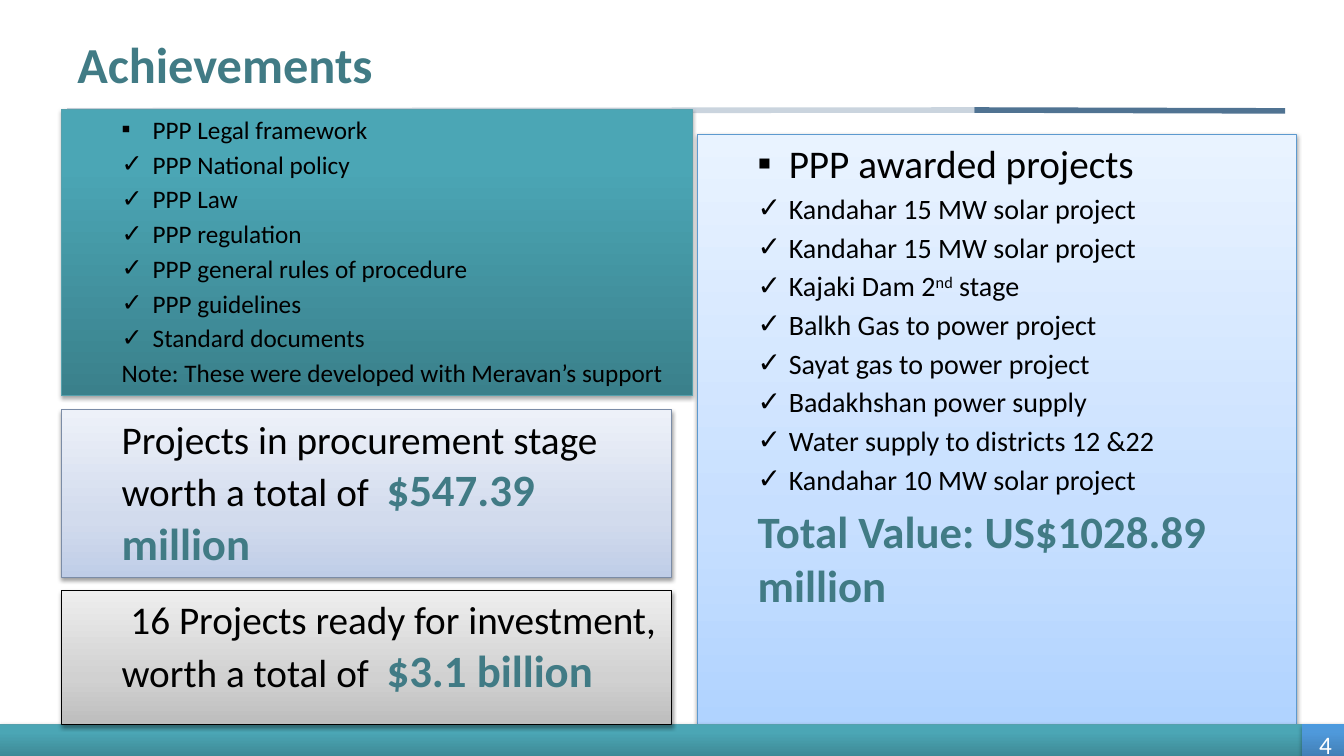
"""Build the Achievements slide on public-private partnership projects."""
from dataclasses import dataclass

from lxml.etree import SubElement
from pptx import Presentation
from pptx.dml.color import RGBColor
from pptx.enum.shapes import MSO_CONNECTOR as Connector, MSO_SHAPE as Preset
from pptx.enum.text import MSO_ANCHOR as Anchor, MSO_AUTO_SIZE as AutoSize, PP_ALIGN as Align
from pptx.oxml.ns import qn
from pptx.shapes.autoshape import Shape
from pptx.slide import Slide
from pptx.text.text import TextFrame, _Paragraph as Paragraph, _Run as Run
from pptx.util import Inches, Pt

COLUMNS, ROWS = 160, 90
SLIDE_WIDTH, SLIDE_HEIGHT = Inches(13.33), Inches(7.5)
FONT = "Calibri"
SQUARE, CHECK = "▪", "✓"
TEXT_INDENT, BULLET_INDENT, BULLET_HANG = 6, 9.7, 3.7
SPACE_SHARE = 0.18

BLACK = RGBColor(0x00, 0x00, 0x00)
WHITE = RGBColor(0xFF, 0xFF, 0xFF)
TEAL = RGBColor(0x41, 0x7B, 0x85)
SLATE = RGBColor(0x50, 0x73, 0x92)
TEAL_EDGE = RGBColor(0x56, 0xA0, 0xAC)
SKY_EDGE = RGBColor(0x5D, 0x9A, 0xCF)
LILAC_EDGE = RGBColor(0x7B, 0x8C, 0xA6)
TEAL_SHADES = (RGBColor(0x3A, 0x80, 0x8B), RGBColor(0x4B, 0xA6, 0xB5), RGBColor(0x49, 0xA8, 0xB8))
BLUE_SHADES = (RGBColor(0x3D, 0x76, 0xA8), RGBColor(0x4F, 0x99, 0xDB), RGBColor(0x4C, 0x9A, 0xDE))
SKY_SHADES = (RGBColor(0xB0, 0xD3, 0xFF), RGBColor(0xC7, 0xDF, 0xFF), RGBColor(0xE9, 0xF3, 0xFF))
LILAC_SHADES = (RGBColor(0xBF, 0xCD, 0xE7), RGBColor(0xD2, 0xDB, 0xED), RGBColor(0xED, 0xF1, 0xF9))
GREY_SHADES = (RGBColor(0xBD, 0xBD, 0xBD), RGBColor(0xD1, 0xD1, 0xD1), RGBColor(0xEE, 0xEE, 0xEE))


@dataclass(frozen=True)
class Area:
    """Place on the grid, in columns and rows."""
    column: float
    row: float
    columns: float
    rows: float


@dataclass(frozen=True)
class Finish:
    """Upward gradient, outline and shadow of a panel."""
    shades: tuple[RGBColor, ...]
    edge: RGBColor | None
    middle: int = 35
    shadow_alpha: int = 38
    shadow_distance: float = 1.6


@dataclass(frozen=True)
class Phrase:
    """Words in one style."""
    words: str
    size: int
    color: RGBColor = BLACK
    bold: bool = False
    raised: bool = False


@dataclass(frozen=True)
class Item:
    """Paragraph with an optional bullet."""
    phrases: tuple[Phrase, ...]
    bullet: str = ""


@dataclass(frozen=True)
class Panel:
    """Filled rectangle with its paragraphs."""
    area: Area
    finish: Finish
    items: tuple[Item, ...] = ()


@dataclass(frozen=True)
class Rule:
    """Line under the title."""
    start: tuple[float, float]
    end: tuple[float, float]
    opacity: int


def checks(size: int, *names: str) -> tuple[Item, ...]:
    """Return one ticked item per name."""
    return tuple(Item((Phrase(name, size),), CHECK) for name in names)


def worth(lead: str, amount: str) -> tuple[Item, ...]:
    """Return a statement that ends in a highlighted amount."""
    return (Item((Phrase(lead, 28), Phrase(amount, 32, TEAL, True))),)


TEAL_BAND = Finish(TEAL_SHADES, TEAL_EDGE, 80, 35, 1.8)
BLUE_TAB = Finish(BLUE_SHADES, None, 80, 35, 1.8)

TITLE_AREA = Area(8, 2, 124, 11)
RULES = (Rule((116, 13.1), (153, 13.2), 100), Rule((8, 13.2), (116, 13.1), 30))
AWARDED = Panel(Area(83, 16, 71.4, 70.2), Finish(SKY_SHADES, SKY_EDGE), (
    Item((Phrase("PPP awarded projects", 28),), SQUARE),
    *checks(20, "Kandahar 15 MW solar project", "Kandahar 15 MW solar project"),
    Item((Phrase("Kajaki Dam 2", 20), Phrase("nd", 20, raised=True), Phrase(" stage", 20)), CHECK),
    *checks(20, "Balkh Gas to power project", "Sayat gas to power project",
            "Badakhshan power supply", "Water supply to districts 12 &22",
            "Kandahar 10 MW solar project"),
    Item((Phrase("Total Value: US$1028.89 million", 32, TEAL, True),)),
))
FOOTER = Panel(Area(0, 86.2, 160, 4.8), TEAL_BAND)
PAGE_TAB = Panel(Area(155, 86.2, 5.6, 4.8), BLUE_TAB)
STATEMENTS = (
    Panel(Area(7.3, 13, 75.1, 34.1), TEAL_BAND, (
        Item((Phrase("PPP Legal framework", 18),), SQUARE),
        *checks(18, "PPP National policy", "PPP Law", "PPP regulation",
                "PPP general rules of procedure", "PPP guidelines", "Standard documents"),
        Item((Phrase("Note: These were developed with Meravan’s support", 18),)),
    )),
    Panel(Area(7.3, 48.8, 72.7, 20), Finish(LILAC_SHADES, LILAC_EDGE),
          worth("Projects in procurement stage worth a total of  ", "$547.39 million")),
    Panel(Area(7.3, 70.3, 72.7, 16), Finish(GREY_SHADES, BLACK),
          worth(" 16 Projects ready for investment, worth a total of  ", "$3.1 billion")),
)


def across(columns: float) -> int:
    """Convert columns to a length."""
    return round(SLIDE_WIDTH * columns / COLUMNS)


def down(rows: float) -> int:
    """Convert rows to a length."""
    return round(SLIDE_HEIGHT * rows / ROWS)


def place(shape: Shape, area: Area) -> None:
    """Move and size a shape on the grid."""
    shape.left, shape.top = across(area.column), down(area.row)
    shape.width, shape.height = across(area.columns), down(area.rows)


def apply_finish(shape: Shape, finish: Finish) -> None:
    """Give a shape its gradient, outline and shadow."""
    shape.fill.gradient()
    shape.fill.gradient_angle = 90
    stops = shape._element.spPr.find(f".//{qn('a:gsLst')}")
    for stop in list(stops):
        stops.remove(stop)
    for position, shade in zip((0, finish.middle, 100), finish.shades):
        stop = SubElement(stops, qn("a:gs"), pos=str(position * 1000))
        SubElement(stop, qn("a:srgbClr"), val=str(shade))
    if finish.edge is None:
        shape.line.fill.background()
    else:
        shape.line.color.rgb = finish.edge
        shape.line.width = Pt(0.75)
    shape.shadow.inherit = False
    effects = shape._element.spPr.find(qn("a:effectLst"))
    shadow = SubElement(effects, qn("a:outerShdw"), blurRad=str(Pt(3.1)),
                        dist=str(Pt(finish.shadow_distance)), dir="5400000", rotWithShape="0")
    tint = SubElement(shadow, qn("a:srgbClr"), val=str(BLACK))
    SubElement(tint, qn("a:alpha"), val=str(finish.shadow_alpha * 1000))


def style_run(run: Run, phrase: Phrase) -> None:
    """Format a run as its phrase asks."""
    run.font.name, run.font.size, run.font.bold = FONT, Pt(phrase.size), phrase.bold
    run.font.color.rgb = phrase.color
    if phrase.raised:
        run._r.get_or_add_rPr().set("baseline", "30000")


def write_item(paragraph: Paragraph, item: Item) -> None:
    """Write an item with its indent and bullet."""
    paragraph.level, paragraph.alignment = 1, Align.LEFT
    paragraph.space_before = Pt(SPACE_SHARE * item.phrases[0].size)
    properties = paragraph._p.get_or_add_pPr()
    properties.set("marL", str(across(BULLET_INDENT if item.bullet else TEXT_INDENT)))
    properties.set("indent", str(-across(BULLET_HANG) if item.bullet else 0))
    if item.bullet:
        SubElement(properties, qn("a:buFont"), typeface=FONT)
        SubElement(properties, qn("a:buChar"), char=item.bullet)
    else:
        SubElement(properties, qn("a:buNone"))
    for phrase in item.phrases:
        run = paragraph.add_run()
        run.text = phrase.words
        style_run(run, phrase)


def write_single(frame: TextFrame, phrase: Phrase, align: Align, anchor: Anchor) -> None:
    """Write one phrase as the whole text."""
    frame.text = phrase.words
    frame.vertical_anchor = anchor
    frame.paragraphs[0].alignment = align
    style_run(frame.paragraphs[0].runs[0], phrase)


def fill_panel(shape: Shape, panel: Panel) -> None:
    """Place, finish and write a panel."""
    place(shape, panel.area)
    apply_finish(shape, panel.finish)
    frame = shape.text_frame
    frame.word_wrap, frame.auto_size, frame.vertical_anchor = True, AutoSize.NONE, Anchor.TOP
    for index, item in enumerate(panel.items):
        write_item(frame.add_paragraph() if index else frame.paragraphs[0], item)


def add_panel(slide: Slide, panel: Panel) -> Shape:
    """Add a rectangle for a panel."""
    shape = slide.shapes.add_shape(Preset.RECTANGLE, 0, 0, 0, 0)
    fill_panel(shape, panel)
    return shape


def add_rule(slide: Slide, rule: Rule) -> None:
    """Draw a line under the title."""
    (left, top), (right, bottom) = rule.start, rule.end
    line = slide.shapes.add_connector(Connector.STRAIGHT, across(left), down(top),
                                      across(right), down(bottom))
    line.line.color.rgb, line.line.width = SLATE, Pt(4)
    tint = line._element.spPr.find(f".//{qn('a:srgbClr')}")
    SubElement(tint, qn("a:alpha"), val=str(rule.opacity * 1000))
    SubElement(line._element.spPr, qn("a:effectLst"))


def main() -> None:
    """Build and save the slide."""
    deck = Presentation()
    deck.slide_width, deck.slide_height = SLIDE_WIDTH, SLIDE_HEIGHT
    slide = deck.slides.add_slide(deck.slide_layouts[1])
    place(slide.shapes.title, TITLE_AREA)
    write_single(slide.shapes.title.text_frame, Phrase("Achievements", 36, TEAL, True),
                 Align.LEFT, Anchor.MIDDLE)
    fill_panel(slide.placeholders[1], AWARDED)
    for rule in RULES:
        add_rule(slide, rule)
    add_panel(slide, FOOTER)
    page_tab = add_panel(slide, PAGE_TAB)
    write_single(page_tab.text_frame, Phrase("4", 18, WHITE), Align.CENTER, Anchor.TOP)
    for statement in STATEMENTS:
        add_panel(slide, statement)
    deck.save("out.pptx")


if __name__ == "__main__":
    main()
